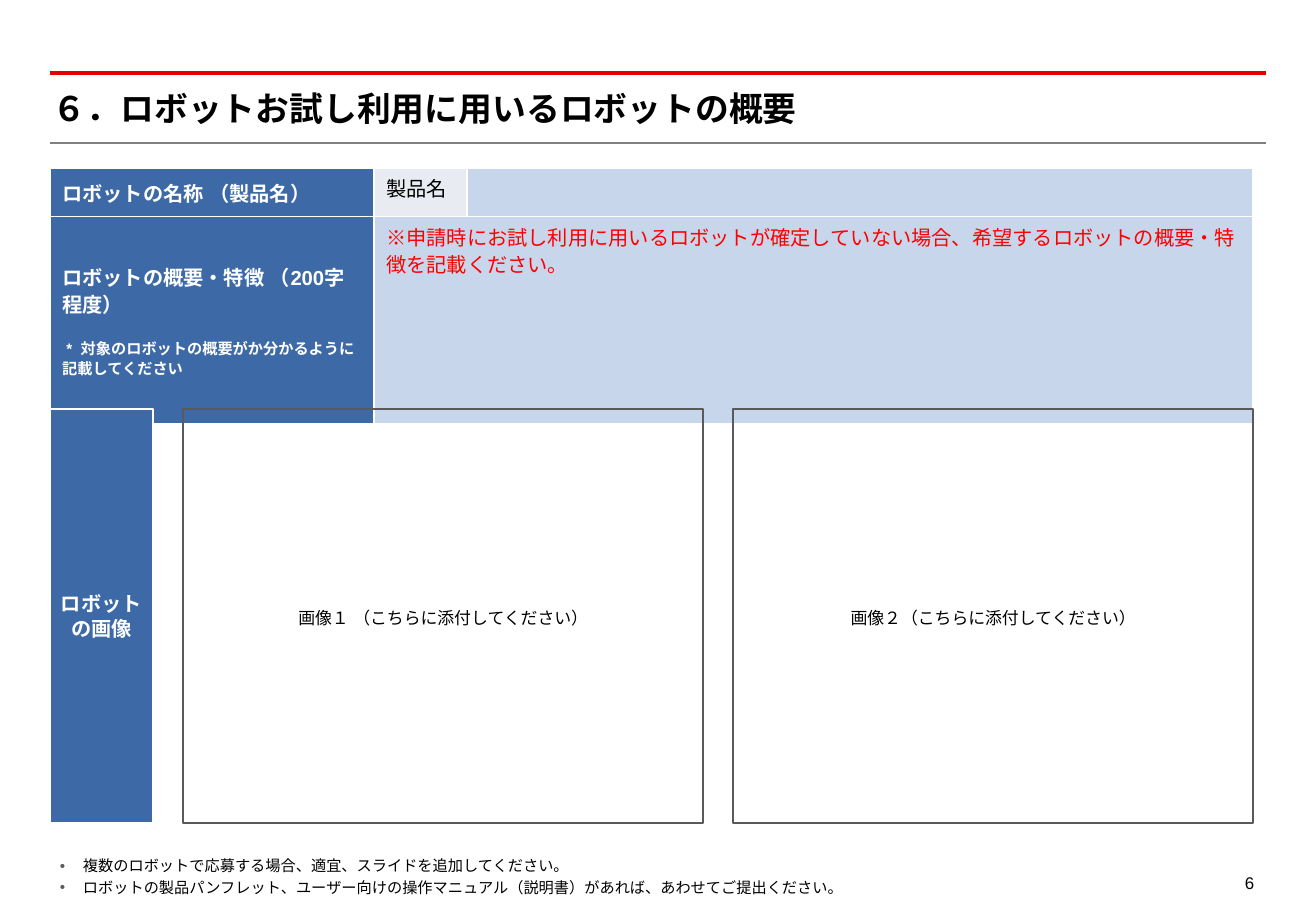
from dataclasses import dataclass

from lxml import etree
from pptx import Presentation
from pptx.dml.color import RGBColor
from pptx.enum import lang, shapes, text
from pptx.oxml import ns
from pptx.util import Emu, Pt

EMU_PER_PX = 914400 / 121.5


@dataclass(frozen=True)
class Theme:
    font: str = "Arial"
    black: str = "000000"
    white: str = "FFFFFF"
    red: str = "FF0000"
    rule_red: str = "E60000"
    rule_gray: str = "808080"
    outline: str = "5A5A5A"
    header: str = "3D6AA7"
    label: str = "E8EBF1"
    entry: str = "C7D6EA"
    title: int = 20
    body: int = 12
    caption: int = 10
    note: int = 9


THEME = Theme()
LEFT = 50
GAP = 30


def px(length):
    return Emu(round(length * EMU_PER_PX))


def rgb(color):
    return RGBColor.from_string(color)


def sub(parent, tag, **attributes):
    return etree.SubElement(parent, ns.qn(tag), attributes)


def add_run(paragraph, words, size, color, bold=False):
    run = paragraph.add_run()
    run.text = words
    font = run.font
    font.name = THEME.font
    font.size = Pt(size)
    font.bold = bold
    font.color.rgb = rgb(color)
    font.language_id = lang.MSO_LANGUAGE_ID.JAPANESE
    run._r.get_or_add_rPr().find(ns.qn("a:latin")).addnext(
        etree.Element(ns.qn("a:ea"), typeface=THEME.font))


def write(frame, lines, color, bold=False, align=text.PP_ALIGN.LEFT,
          spacing=1.2, before=0):
    """Write (words, size) lines, one paragraph each."""
    for index, (words, size) in enumerate(lines):
        paragraph = frame.add_paragraph() if index else frame.paragraphs[0]
        paragraph.alignment = align
        paragraph.line_spacing = spacing
        paragraph.space_before = Pt(before if index else 0)
        add_run(paragraph, words, size, color, bold)


def set_margins(frame, margin):
    frame.margin_left = frame.margin_right = px(margin)
    frame.margin_top = frame.margin_bottom = px(margin)


def add_text(slide, left, top, width, height, lines, margin=0,
             anchor=text.MSO_ANCHOR.TOP, **style):
    frame = slide.shapes.add_textbox(
        px(left), px(top), px(width), px(height)).text_frame
    frame.word_wrap = True
    frame.vertical_anchor = anchor
    set_margins(frame, margin)
    write(frame, lines, THEME.black, **style)
    return frame


def add_rule(slide, top, color, weight):
    rule = slide.shapes.add_connector(
        shapes.MSO_CONNECTOR.STRAIGHT, px(LEFT), px(top), px(1266), px(top))
    rule.line.color.rgb = rgb(color)
    rule.line.width = Pt(weight)
    sub(rule._element.spPr, "a:effectLst")


def add_box(slide, left, width, lines, color, outline, fill=None, **style):
    shape = slide.shapes.add_shape(
        shapes.MSO_SHAPE.RECTANGLE, px(left), px(409), px(width), px(414))
    shape.shadow.inherit = False
    if fill:
        shape.fill.solid()
        shape.fill.fore_color.rgb = rgb(fill)
    else:
        shape.fill.background()
    shape.line.color.rgb = rgb(outline)
    shape.line.width = Pt(1)
    frame = shape.text_frame
    frame.word_wrap = False
    frame.vertical_anchor = text.MSO_ANCHOR.MIDDLE
    set_margins(frame, 2)
    write(frame, lines, color, align=text.PP_ALIGN.CENTER, **style)


def style_cell(cell, fill):
    properties = cell._tc.get_or_add_tcPr()
    for side in ("a:lnL", "a:lnR", "a:lnT", "a:lnB"):
        border = sub(properties, side, w=str(Pt(1)))
        sub(sub(border, "a:solidFill"), "a:srgbClr", val=THEME.white)
    cell.fill.solid()
    cell.fill.fore_color.rgb = rgb(fill)


def add_robot_table(slide):
    widths, heights = (324, 93, 786), (40, 207)
    table = slide.shapes.add_table(
        len(heights), len(widths), px(LEFT), px(168),
        px(sum(widths)), px(sum(heights))).table
    for column, width in zip(table.columns, widths):
        column.width = px(width)
    for row, height in zip(table.rows, heights):
        row.height = px(height)
        for cell, fill in zip(row.cells, (THEME.header, THEME.label, THEME.entry)):
            style_cell(cell, fill)
    description = table.cell(1, 1)
    description.merge(table.cell(1, 2))
    description.fill.fore_color.rgb = rgb(THEME.entry)

    # Row headings
    headings = (
        [("ロボットの名称 （製品名）", THEME.body)],
        [("ロボットの概要・特徴 （200字程度）", THEME.body),
         (" *  対象のロボットの概要がか分かるように記載してください", THEME.note)],
    )
    for index, lines in enumerate(headings):
        cell = table.cell(index, 0)
        cell.vertical_anchor = text.MSO_ANCHOR.MIDDLE
        write(cell.text_frame, lines, THEME.white, bold=True, before=12)

    # Entries
    write(table.cell(0, 1).text_frame, [("製品名", THEME.body)], THEME.black)
    write(description.text_frame,
          [("※申請時にお試し利用に用いるロボットが確定していない場合、"
            "希望するロボットの概要・特徴を記載ください。", THEME.body)], THEME.red)


def add_bullets(frame):
    for paragraph in frame.paragraphs:
        properties = paragraph._p.get_or_add_pPr()
        indent = px(23)
        properties.set("marL", str(indent))
        properties.set("indent", str(-indent))
        sub(sub(properties, "a:buClr"), "a:srgbClr", val=THEME.outline)
        sub(properties, "a:buFont", typeface=THEME.font)
        sub(properties, "a:buChar", char="•")


def main():
    presentation = Presentation()
    presentation.slide_width, presentation.slide_height = px(1316), px(911)
    slide = presentation.slides.add_slide(presentation.slide_layouts[6])

    # Heading
    add_rule(slide, 73, THEME.rule_red, 2)
    add_rule(slide, 143, THEME.rule_gray, 1.25)
    add_text(slide, 53, 87, 1204, 41,
             [("６．ロボットお試し利用に用いるロボットの概要", THEME.title)],
             anchor=text.MSO_ANCHOR.MIDDLE, bold=True, spacing=1.0)

    # Robot details
    add_robot_table(slide)

    # Robot images
    label_width, image_width = 103, 520
    add_box(slide, LEFT, label_width,
            [("ロボット", THEME.body), ("の画像", THEME.body)],
            THEME.white, THEME.white, THEME.header, bold=True, spacing=1.0)
    captions = ("画像１ （こちらに添付してください）",
                "画像２（こちらに添付してください）")
    for index, caption in enumerate(captions):
        left = LEFT + label_width + GAP + index * (image_width + GAP)
        add_box(slide, left, image_width, [(caption, THEME.caption)],
                THEME.black, THEME.outline)

    # Notes and page number
    notes = ("複数のロボットで応募する場合、適宜、スライドを追加してください。",
             "ロボットの製品パンフレット、ユーザー向けの操作マニュアル（説明書）"
             "があれば、あわせてご提出ください。")
    add_bullets(add_text(slide, 60, 853, 1130, 43,
                         [(note, THEME.note) for note in notes]))
    add_text(slide, 1206, 863, 54, 34, [("6", THEME.caption)],
             margin=6, align=text.PP_ALIGN.RIGHT)

    presentation.save("out.pptx")


if __name__ == "__main__":
    main()
